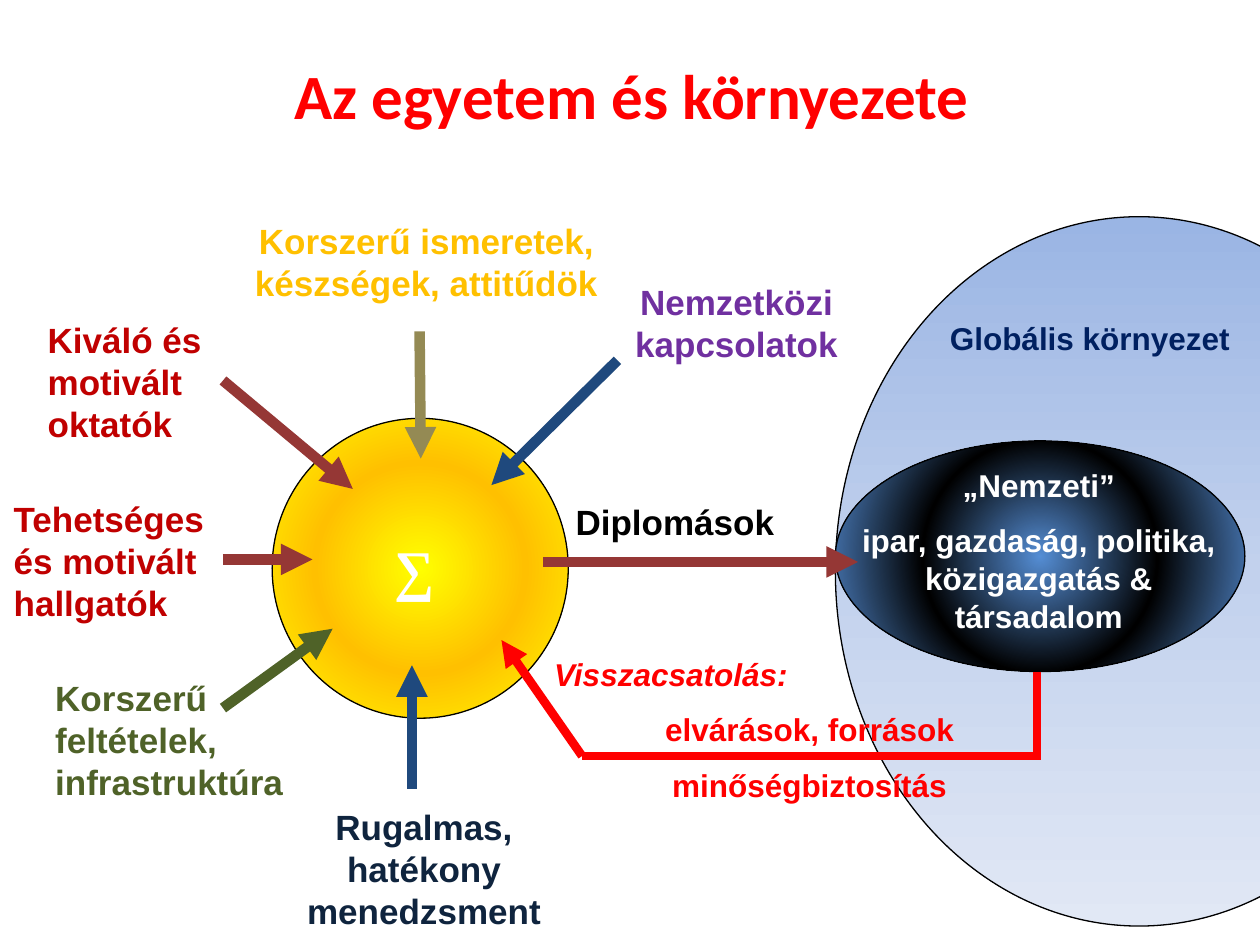
from pptx import Presentation, util as u
from pptx.dml.color import RGBColor
from pptx.enum import shapes as sh, text as tx
from pptx.oxml import parse_xml
from pptx.oxml.ns import nsdecls, qn

# The slide is a grid of 100 columns by 75 rows of square cells.
WIDE, HIGH = u.Inches(10), u.Inches(7.5)
COL, ROW = WIDE / 100, HIGH / 75

BLACK = RGBColor(0, 0, 0)
WHITE = RGBColor(255, 255, 255)
RED = RGBColor(255, 0, 0)
CRIMSON = RGBColor(0xC0, 0, 0)
BRICK = RGBColor(0x95, 0x37, 0x35)
GOLD = RGBColor(0xFF, 0xC0, 0)
YELLOW = RGBColor(0xFF, 0xFF, 0)
KHAKI = RGBColor(0x94, 0x8A, 0x54)
OLIVE = RGBColor(0x4F, 0x62, 0x28)
PURPLE = RGBColor(0x70, 0x30, 0xA0)
BLUE = RGBColor(0x1F, 0x49, 0x7D)
NAVY = RGBColor(0, 0x20, 0x60)
INK = RGBColor(0x0F, 0x24, 0x3E)
SKY = RGBColor(0x55, 0x8E, 0xD5)
HAZE = [RGBColor(0x9A, 0xB5, 0xE4), RGBColor(0xC2, 0xD1, 0xED),
        RGBColor(0xE1, 0xE8, 0xF5)]

LEFT, MID = tx.PP_ALIGN.LEFT, tx.PP_ALIGN.CENTER
DOWN = '<a:lin ang="5400000" scaled="0"/>'
ROUND = ('<a:path path="circle"><a:fillToRect l="50000" t="50000" '
         'r="50000" b="50000"/></a:path>')

# Centre, mid-way and edge colours for ROUND; top to bottom for DOWN
OVALS = [
    ((66.3, 17.2, 48.2, 56.3), HAZE, DOWN),
    ((21.6, 33.2, 23.5, 23.8), [YELLOW, GOLD, YELLOW], ROUND),
    ((66.3, 35, 32.5, 18.3), [SKY, BLACK, SKY], ROUND),
]

ARROWS = [
    ((17.7, 30.2), (28, 38.8), BRICK),
    ((17.7, 44.4), (24.8, 44.4), BRICK),
    ((33.3, 26.3), (33.4, 36.4), KHAKI),
    ((17.7, 56.2), (26.4, 49.9), OLIVE),
    ((49, 28.6), (39, 38.5), BLUE),
    ((43.1, 44.6), (68.1, 44.6), BRICK),
    ((32.7, 62.6), (32.7, 52.8), BLUE),
]

LABELS = [
    ((20.2, 63.4, 26.9, 11.1), "Rugalmas, hatékony menedzsment", INK, MID),
    ((0.1, 39, 20.8, 11.1), "Tehetséges és motivált hallgatók", CRIMSON, LEFT),
    ((2.8, 24.8, 17.9, 11.1), "Kiváló és motivált oktatók", CRIMSON, LEFT),
    ((3.4, 53.2, 20.6, 11.1), "Korszerű feltételek, infrastruktúra", OLIVE,
     LEFT),
    ((18.7, 16.9, 30.3, 7.7), "Korszerű ismeretek, készségek, attitűdök",
     GOLD, MID),
    ((44.7, 39.2, 18.6, 4.4), "Diplomások", BLACK, LEFT),
    ((47.2, 21.8, 22.5, 7.7), "Nemzetközi kapcsolatok", PURPLE, MID),
]


def place(x, y, w, h):
    return [round(v) for v in (x * COL, y * ROW, w * COL, h * ROW)]


def style(item, **vals):
    for name, val in vals.items():
        setattr(item, name, val)


def oval(slide, box, tones, kind):
    item = slide.shapes.add_shape(sh.MSO_SHAPE.OVAL, *place(*box))
    stops = "".join(
        f'<a:gs pos="{n * 50000}"><a:srgbClr val="{tone}"/></a:gs>'
        for n, tone in enumerate(tones))
    fill = parse_xml(f'<a:gradFill {nsdecls("a")} rotWithShape="1">'
                     f'<a:gsLst>{stops}</a:gsLst>{kind}</a:gradFill>')
    item.element.spPr.find(qn("a:prstGeom")).addnext(fill)
    item.shadow.inherit = False
    item.line.width = u.Pt(0.75)
    item.line.color.rgb = BLACK


def line(slide, start, end, tone, width=6, tip=True):
    spots = place(*start, *end)
    item = slide.shapes.add_connector(sh.MSO_CONNECTOR.STRAIGHT, *spots)
    item.line.width = u.Pt(width)
    item.line.color.rgb = tone
    if tip:
        item.line._get_or_add_ln().append(
            parse_xml(f'<a:tailEnd {nsdecls("a")} type="triangle"/>'))
    item.element.spPr.append(parse_xml(f'<a:effectLst {nsdecls("a")}/>'))


def label(slide, box, words, tone, align=MID, size=20, face="Arial",
          wrap=True, anchor=tx.MSO_ANCHOR.TOP):
    """Add bold text, one paragraph per item of words; return the paragraphs."""
    frame = slide.shapes.add_textbox(*place(*box)).text_frame
    style(frame, word_wrap=wrap, vertical_anchor=anchor, text=words)
    for n, para in enumerate(frame.paragraphs):
        style(para, alignment=align, space_before=u.Pt(10 if n else 0))
        font = para.runs[0].font
        style(font, size=u.Pt(size), name=face, bold=True)
        font.color.rgb = tone
    return frame.paragraphs


def loop(slide):
    """Draw the feedback path from the outer world back to the university."""
    line(slide, (82.3, 53.3), (82.3, 60), RED, 5, False)
    line(slide, (82.6, 60), (46.2, 60), RED, 5, False)
    line(slide, (46.2, 60), (39.8, 50.8), RED, 5)
    head = label(slide, (43, 51.5, 42.5, 13.1),
                 "Visszacsatolás:\nelvárások, források\nminőségbiztosítás",
                 RED, size=18)[0]
    head.alignment = LEFT
    head.runs[0].font.italic = True


def main():
    deck = Presentation()
    style(deck, slide_width=WIDE, slide_height=HIGH)
    slide = deck.slides.add_slide(deck.slide_layouts[6])
    for item in OVALS:
        oval(slide, *item)
    for item in ARROWS:
        line(slide, *item)
    for item in LABELS:
        label(slide, *item)
    label(slide, (5.1, 1.2, 90, 12.5), "Az egyetem és környezete", RED,
          size=36, face="Calibri", anchor=tx.MSO_ANCHOR.MIDDLE)
    label(slide, (74.4, 24.8, 24.5, 4), "Globális környezet", NAVY, LEFT, 18,
          wrap=False)
    label(slide, (30.3, 41.9, 7.5, 6.4), "∑", WHITE, LEFT, 32,
          "Times New Roman")
    label(slide, (67.3, 36.5, 30.3, 14.6),
          "„Nemzeti”\nipar, gazdaság, politika, közigazgatás & társadalom",
          WHITE, size=18)
    loop(slide)
    deck.save("out.pptx")


if __name__ == "__main__":
    main()
